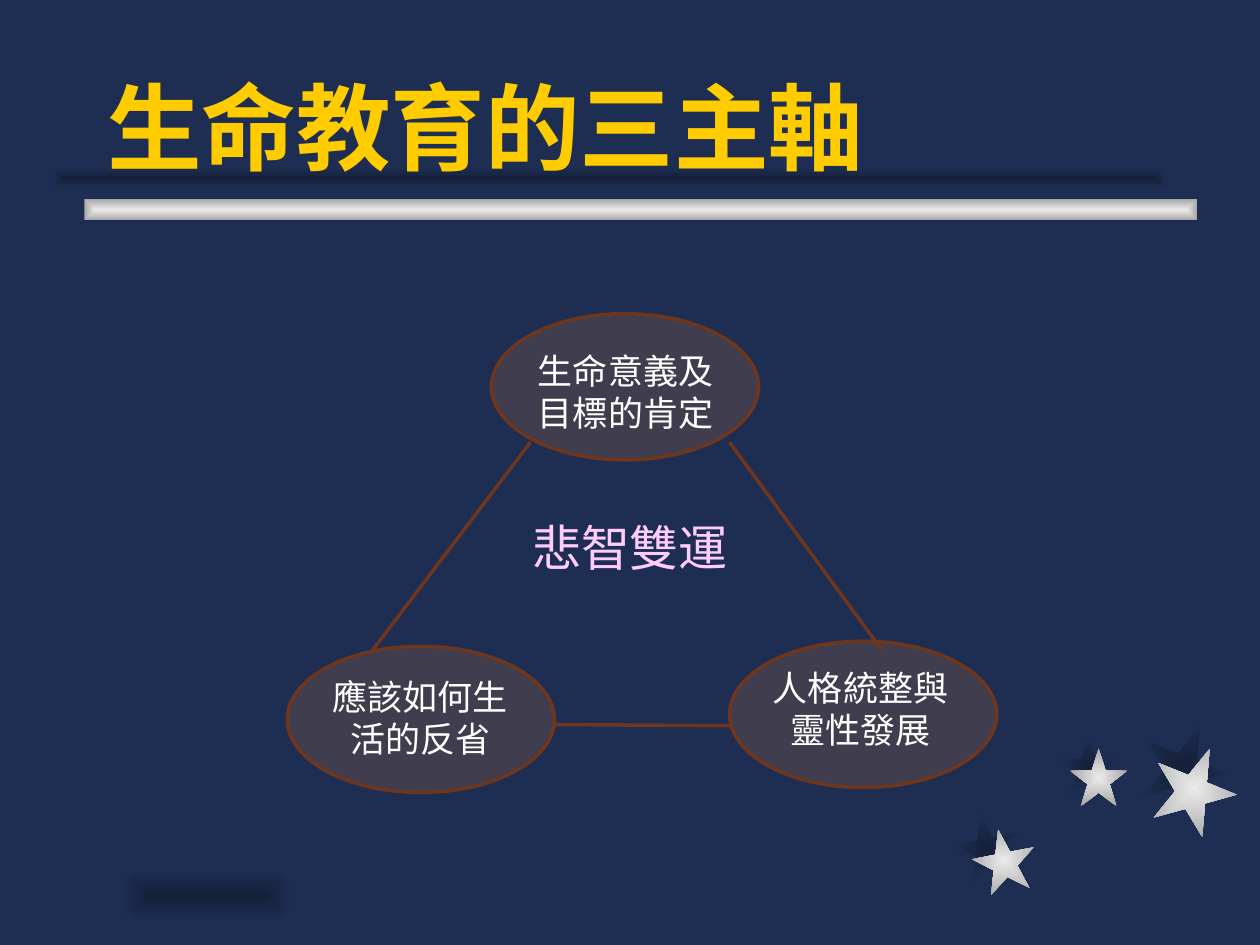
import math
import pptx
import pptx.util
import pptx.dml.color
import pptx.enum.shapes
import pptx.enum.text
import pptx.oxml
import pptx.oxml.ns

MSO = pptx.enum.shapes.MSO_SHAPE
PP = pptx.enum.text.PP_ALIGN
ANCHOR = pptx.enum.text.MSO_ANCHOR
In, Pt = pptx.util.Inches, pptx.util.Pt

THEME = {
    "bg": "1E2E53", "line": "6E361D", "oval": "FF9933", "oval_alpha": 15, "line_width": 2,
    "silver": ("EAEAEA", "A7A7A7"), "shade": ("15213B", "1E2E53"),
    "title": {"size": 54, "name": "Arial", "color": "FFCC00", "bold": True},
    "axis": {"size": 20, "name": "Arial", "color": "FFFFFF"},
    "top_axis": {"size": 20, "name": "Calibri", "color": "FFFFFF"},
    "center": {"size": 28, "name": "Times New Roman", "color": "FFCCFF"},
}

TITLE = "生命教育的三主軸"
OVAL_SIZE = (2.12, 1.16)
AXES = [
    ("人格統整與靈性發展", (5.79, 5.09), (5.94, 5.25, 1.69, 0.74), "axis"),
    ("生命意義及目標的肯定", (3.9, 2.49), (4.06, 2.73, 1.72, 0.74), "top_axis"),
    ("應該如何生活的反省", (2.28, 5.13), (2.4, 5.32, 1.78, 0.74), "axis"),
]
EDGES = [(5.79, 3.51, 7, 5.16), (4.39, 5.75, 5.8, 5.76), (4.21, 3.51, 2.95, 5.17)]
CENTER = ("悲智雙運", (3.9, 4.06, 2.2, 0.57))

STARS = [
    ("shade", 7.58, 6.47, 0.5, -11), ("shade", 8.41, 5.85, 0.46, 0), ("shade", 9.06, 5.75, 0.67, 22),
    ("silver", 7.72, 6.58, 0.5, -11), ("silver", 8.49, 5.94, 0.46, 0), ("silver", 9.14, 5.92, 0.67, 22),
]
BARS = [("silver", 0.67, 1.58), ("shade", 0.42, 1.33)]
BAR_SIZE = (8.83, 0.17)
BUTTON_SHADE = (0.97, 6.9, 1.34, 0.42)
BUTTONS = [(1.46, -1), (1.58, 1)]
BUTTON_TOP, BUTTON_WIDTH, BUTTON_HEIGHT = 7.02, 0.61, 0.38


def rgb(c):
    return pptx.dml.color.RGBColor.from_string(c)


def gradient(sp, name, kind="shape"):
    sp.shadow.inherit = False
    sp.line.fill.background()
    stops = "".join(f'<a:gs pos="{pos}"><a:srgbClr val="{c}"/></a:gs>'
                    for pos, c in zip((0, 100000), THEME[name]))
    grad = pptx.oxml.parse_xml(
        f'<a:gradFill rotWithShape="1" {pptx.oxml.ns.nsdecls("a")}><a:gsLst>{stops}</a:gsLst>'
        f'<a:path path="{kind}"><a:fillToRect l="50000" t="50000" r="50000" b="50000"/></a:path></a:gradFill>')
    sp.fill.background()
    no_fill = sp._element.spPr.find(pptx.oxml.ns.qn("a:noFill"))
    no_fill.getparent().replace(no_fill, grad)


def write(tf, text, style, align, inset=(0.1, 0.05), anchor=ANCHOR.TOP):
    x, y = map(In, inset)
    frame = {"margin_left": x, "margin_right": x, "margin_top": y, "margin_bottom": y,
             "word_wrap": True, "vertical_anchor": anchor}
    for key, value in frame.items():
        setattr(tf, key, value)
    p = tf.paragraphs[0]
    p.alignment = align
    r = p.add_run()
    r.text = text
    fmt = THEME[style]
    for key, value in {"size": Pt(fmt["size"]), "name": fmt["name"], "bold": fmt.get("bold", False)}.items():
        setattr(r.font, key, value)
    r.font.color.rgb = rgb(fmt["color"])
    return p


def outline(sp):
    sp.line.color.rgb = rgb(THEME["line"])
    sp.line.width = Pt(THEME["line_width"])


def add_button(shapes, edge, side):
    radius = BUTTON_HEIGHT / 2
    cx, cy = edge + side * (BUTTON_WIDTH - radius), BUTTON_TOP + radius
    arc = [(cx + side * radius * math.cos(a), cy + radius * math.sin(a))
           for a in (math.radians(d) for d in range(-90, 91, 10))]
    fb = shapes.build_freeform(edge, BUTTON_TOP, scale=In(1))
    fb.add_line_segments(arc + [(edge, BUTTON_TOP + BUTTON_HEIGHT)], close=True)
    gradient(fb.convert_to_shape(), "silver", "rect")


def add_decoration(shapes):
    for name, x, y, size, turn in STARS:
        sp = shapes.add_shape(MSO.STAR_5_POINT, *map(In, (x, y, size, size)))
        sp.rotation = turn
        gradient(sp, name)
    for name, x, y in BARS:
        gradient(shapes.add_shape(MSO.RECTANGLE, *map(In, (x, y, *BAR_SIZE))), name)
    sp = shapes.add_shape(MSO.ROUNDED_RECTANGLE, *map(In, BUTTON_SHADE))
    sp.adjustments[0] = 0.5
    gradient(sp, "shade")
    for edge, side in BUTTONS:
        add_button(shapes, edge, side)


def add_title(shapes):
    sp = shapes.title
    for key, value in zip(("left", "top", "width", "height"), (0.75, 0.25, 8.5, 1.25)):
        setattr(sp, key, In(value))
    write(sp.text_frame, TITLE, "title", PP.LEFT, anchor=ANCHOR.BOTTOM)
    shapes._spTree.append(sp._element)


def add_triangle(shapes):
    for _, corner, _, _ in AXES:
        sp = shapes.add_shape(MSO.OVAL, *map(In, corner + OVAL_SIZE))
        sp.shadow.inherit = False
        sp.fill.solid()
        sp.fill.fore_color.rgb = rgb(THEME["oval"])
        clr = sp._element.spPr.find(".//" + pptx.oxml.ns.qn("a:srgbClr"))
        alpha = pptx.oxml.parse_xml(
            f'<a:alpha {pptx.oxml.ns.nsdecls("a")} val="{THEME["oval_alpha"] * 1000}"/>')
        clr.append(alpha)
        outline(sp)
    for text, _, box, style in AXES:
        tf = shapes.add_textbox(*map(In, box)).text_frame
        p = write(tf, text, style, PP.CENTER, (0.07, 0.04))
        p._p.get_or_add_pPr().set("marL", str(In(0.09)))
    for edge in EDGES:
        cx = shapes.add_connector(pptx.enum.shapes.MSO_CONNECTOR.STRAIGHT, *map(In, edge))
        outline(cx)
        cx._element.spPr.append(pptx.oxml.parse_xml(f'<a:effectLst {pptx.oxml.ns.nsdecls("a")}/>'))
    text, box = CENTER
    write(shapes.add_textbox(*map(In, box)).text_frame, text, "center", PP.CENTER)


def main():
    prs = pptx.Presentation()
    prs.slide_width, prs.slide_height = In(10), In(7.5)
    s = prs.slides.add_slide(prs.slide_layouts[5])
    s.background.fill.solid()
    s.background.fill.fore_color.rgb = rgb(THEME["bg"])
    add_decoration(s.shapes)
    add_title(s.shapes)
    add_triangle(s.shapes)
    prs.save("out.pptx")


if __name__ == "__main__":
    main()
